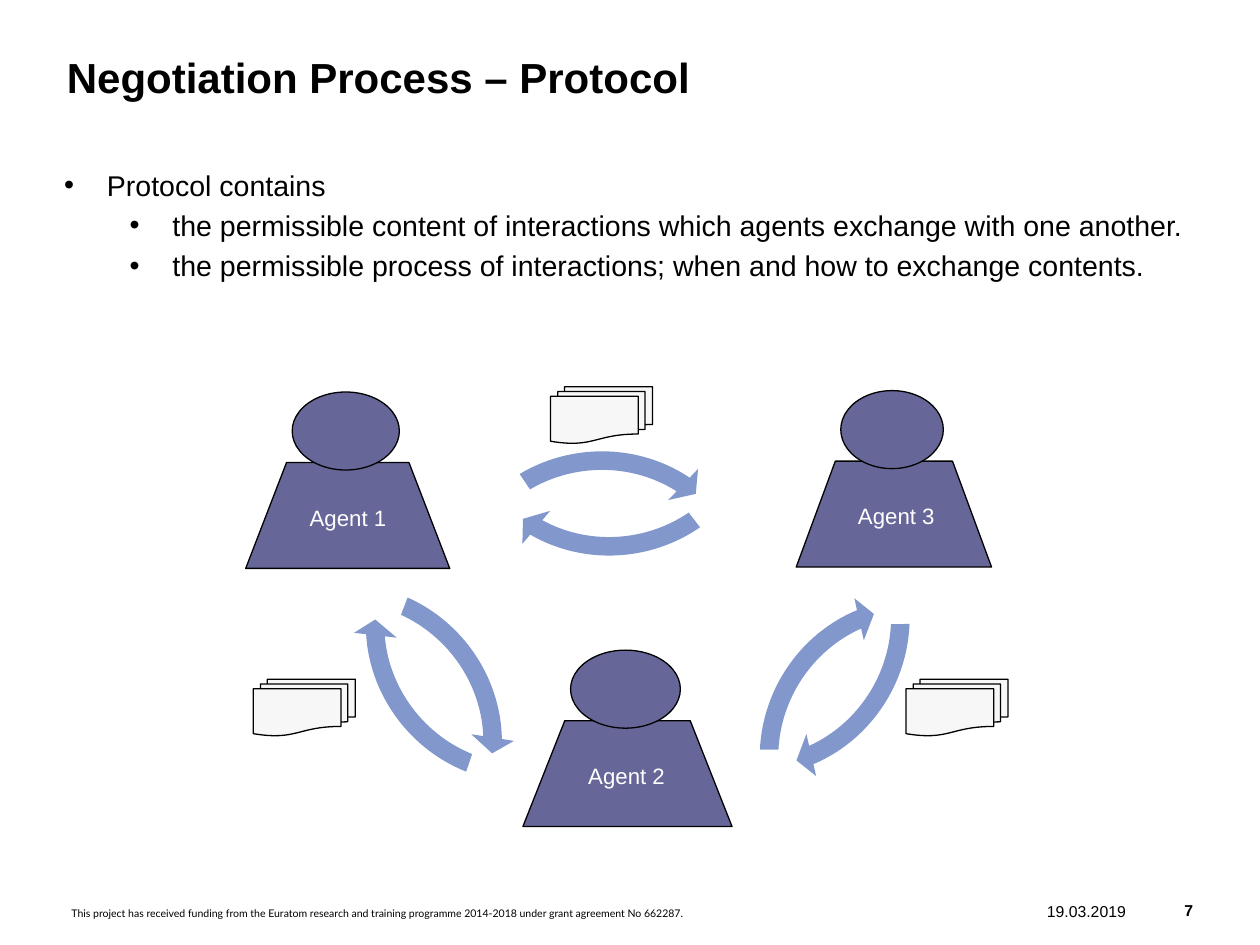
"""Build the negotiation protocol slide with three agents and their exchanges."""
from lxml import etree
from pptx import Presentation
from pptx import util as u
from pptx.dml import color
from pptx.enum import shapes, text
from pptx.oxml import ns

BLACK = color.RGBColor(0x00, 0x00, 0x00)
WHITE = color.RGBColor(0xFF, 0xFF, 0xFF)
PURPLE = color.RGBColor(0x66, 0x66, 0x99)
BLUE = color.RGBColor(0x82, 0x98, 0xCC)
PAPER = color.RGBColor(0xF7, 0xF7, 0xF7)
KIND = shapes.MSO_SHAPE

BODY = [
    (0, "Protocol contains"),
    (1, "the permissible content of interactions which agents exchange with one another."),
    (1, "the permissible process of interactions; when and how to exchange contents."),
]
FUND = ("This project has received funding from the Euratom research and training "
        "programme 2014-2018 under grant agreement No 662287.")
AGENTS = [
    ("Agent 1", 140.4, 224, 116.6),
    ("Agent 3", 455, 223.2, 111.6),
    ("Agent 2", 298.8, 371.5, 119.5),
]
ARROWS = [
    (254.9, 245.5, 85.3),
    (349.2, 264.2, 208.5),
    (204.5, 269.3, 318),
    (428.4, 334.1, 28.9),
    (115.2, 324.7, 140.4),
    (261.4, 142.6, 261.6),
]
BEND = [0.06, 3.94, 133.14, 90.36, 0.07]
PAPERS = [(314.6, 221), (517.7, 388.1), (144.7, 388.1)]


def style(font, size, tint=BLACK, bold=False, name="Arial"):
    """Set the look of a font."""
    font.name = name
    font.size = u.Pt(size)
    font.bold = bold
    font.color.rgb = tint


def label(slide, box, words, size, pad=True, **look):
    """Add a one-line text box."""
    frame = slide.shapes.add_textbox(*map(u.Pt, box)).text_frame
    frame.word_wrap = True
    if not pad:
        frame.margin_left = frame.margin_right = 0
        frame.margin_top = frame.margin_bottom = 0
    frame.text = words
    style(frame.paragraphs[0].runs[0].font, size, **look)


def shape(slide, kind, box, fill, turn=0, edge=True):
    """Add a flat filled shape."""
    item = slide.shapes.add_shape(kind, *map(u.Pt, box))
    item.shadow.inherit = False
    item.rotation = turn
    item.fill.solid()
    item.fill.fore_color.rgb = fill
    if edge:
        item.line.color.rgb = BLACK
        item.line.width = u.Pt(0.75)
    else:
        item.line.fill.background()
    return item


def agent(slide, name, left, top, width):
    """Add a figure with a body, a head and a name."""
    trunk = (left, top + 40.3, width, 60.5)
    head = (left + 0.228 * width, top, 0.525 * width, 44.6)
    tag = (left + 0.253 * width, top + 60.5, 0.637 * width, 22.3)
    shape(slide, KIND.FLOWCHART_MANUAL_OPERATION, trunk, PURPLE, 180)
    shape(slide, KIND.OVAL, head, PURPLE)
    label(slide, tag, name, 12.7, tint=WHITE)


def arrow(slide, left, top, turn):
    """Add a curved arrow."""
    item = shape(slide, KIND.CIRCULAR_ARROW, (left, top, 176.4, 187.2), BLUE, turn, False)
    for spot, value in enumerate(BEND):
        item.adjustments[spot] = value


def title(slide, words):
    """Place and format the title."""
    item = slide.shapes.title
    item.left, item.top, item.width, item.height = map(u.Pt, (31, 25.9, 544.3, 43.9))
    frame = item.text_frame
    frame.text = words
    frame.auto_size = text.MSO_AUTO_SIZE.NONE
    frame.vertical_anchor = text.MSO_ANCHOR.TOP
    para = frame.paragraphs[0]
    para.alignment = text.PP_ALIGN.LEFT
    style(para.runs[0].font, 24, bold=True)


def bullets(slide, rows):
    """Add the bulleted body text."""
    frame = slide.shapes.add_textbox(*map(u.Pt, (29.5, 92.2, 658, 385.2))).text_frame
    frame.word_wrap = True
    for spot, (level, words) in enumerate(rows):
        para = frame.add_paragraph() if spot else frame.paragraphs[0]
        para.text = words
        para.level = level
        para.alignment = text.PP_ALIGN.JUSTIFY
        if spot:
            para.space_before = u.Pt(3.5)
        props = para._p.get_or_add_pPr()
        props.set("marL", str(u.Pt(24.5 + 37.4 * level)))
        props.set("indent", str(u.Pt(-24.5)))
        etree.SubElement(props, ns.qn("a:buFont")).set("typeface", "Arial")
        etree.SubElement(props, ns.qn("a:buChar")).set("char", "•")
        style(para.runs[0].font, 16.3)


def main():
    """Build and save the slide."""
    deck = Presentation()
    deck.slide_width, deck.slide_height = u.Pt(720), u.Pt(540)
    slide = deck.slides.add_slide(deck.slide_layouts[5])
    title(slide, "Negotiation Process – Protocol")
    bullets(slide, BODY)
    for row in AGENTS:
        agent(slide, *row)
    for row in ARROWS:
        arrow(slide, *row)
    for left, top in PAPERS:
        shape(slide, KIND.FLOWCHART_MULTIDOCUMENT, (left, top, 58.3, 32.4), PAPER)
    label(slide, (33.8, 514.8, 413.3, 14.4), FUND, 6, name="Lato")
    label(slide, (598.3, 515.5, 67.7, 15.1), "19.03.2019", 9, pad=False)
    label(slide, (676.8, 514.8, 25.9, 17.3), "7", 9, pad=False, bold=True)
    deck.save("out.pptx")


if __name__ == "__main__":
    main()
